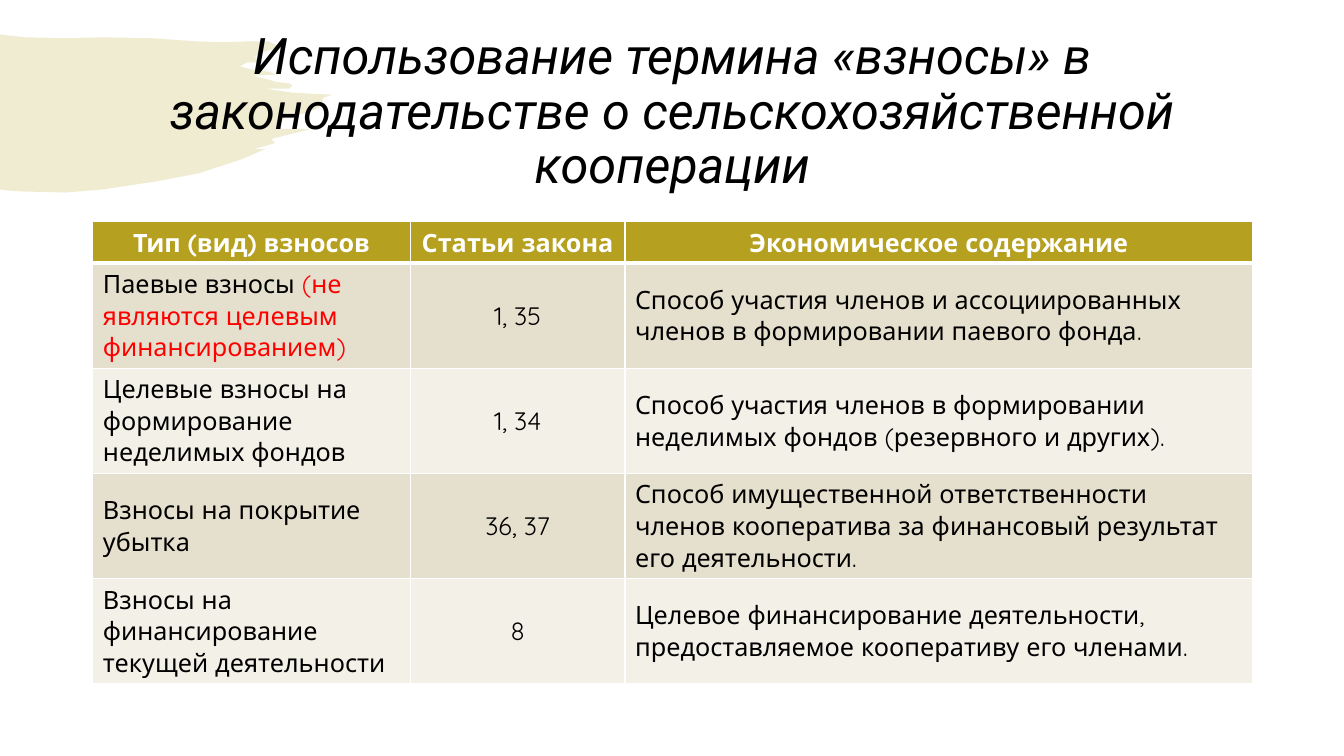
from lxml import etree
from pptx import Presentation
from pptx.dml.color import RGBColor
from pptx.enum.text import MSO_ANCHOR, PP_ALIGN
from pptx.oxml.ns import qn
from pptx.util import Cm, Pt

MIDDLE = MSO_ANCHOR.MIDDLE
LEFT, CENTER = PP_ALIGN.LEFT, PP_ALIGN.CENTER

TITLE = ("Использование термина «взносы» в законодательстве "
         "о сельскохозяйственной кооперации")
HEAD = ["Тип (вид) взносов", "Статьи закона", "Экономическое содержание"]
NOTE = "(не являются целевым финансированием)"
ROWS = [
    ["Паевые взносы ", "1, 35",
     "Способ участия членов и ассоциированных членов в формировании паевого фонда."],
    ["Целевые взносы на формирование неделимых фондов", "1, 34",
     "Способ участия членов в формировании неделимых фондов (резервного и других)."],
    ["Взносы на покрытие убытка", "36, 37",
     "Способ имущественной ответственности членов кооператива "
     "за финансовый результат его деятельности."],
    ["Взносы на финансирование текущей деятельности", "8",
     "Целевое финансирование деятельности, предоставляемое кооперативу его членами."],
]
COLORS = {"gold": "B5A020", "sand": "E5DFCD", "cream": "F3F0E8",
          "white": "FFFFFF", "black": "000000", "red": "FF0000"}
WIDTHS = [8, 5.41, 15.82]
ALIGNS = [LEFT, CENTER, LEFT]
HEAD_H, ROW_H = 1.04, 2.65
EDGE, TOP, WIDE = 2.34, 5.59, 29.21

# Brush outline, in steps of STEP
STEP = Cm(0.0254)
BRUSH = [
    (0, 34), (6, 35), (25, 37), (66, 38), (102, 37), (151, 38), (194, 41),
    (222, 42), (248, 41), (266, 41), (280, 47), (271, 49), (255, 54), (253, 57),
    (256, 59), (262, 62), (245, 62), (238, 66), (246, 68), (256, 70), (266, 71),
    (275, 74), (251, 75), (263, 78), (273, 81), (280, 82), (288, 83), (290, 85),
    (287, 88), (284, 88), (263, 88), (290, 92), (330, 94), (321, 97), (318, 106),
    (307, 111), (300, 113), (283, 116), (280, 120), (278, 125), (274, 128),
    (308, 128), (269, 138), (273, 142), (252, 148), (263, 148), (240, 158),
    (197, 172), (155, 180), (102, 188), (65, 191), (23, 190), (7, 189), (0, 188),
]


def color(name):
    return RGBColor.from_string(COLORS[name])


def style(run, size, font, tint, bold=False, italic=False):
    run.font.size, run.font.name = Pt(size), font
    run.font.bold, run.font.italic = bold, italic
    run.font.color.rgb = color(tint)


def add_brush(slide):
    pen = slide.shapes.build_freeform(*BRUSH[0], scale=STEP)
    pen.add_line_segments(BRUSH[1:], close=True)
    brush = pen.convert_to_shape()
    brush.shadow.inherit = False
    brush.line.fill.background()
    brush.fill.solid()
    brush.fill.fore_color.rgb = color("gold")
    tone = brush.fill._xPr.find(".//" + qn("a:srgbClr"))
    etree.SubElement(tone, qn("a:alpha"), val="20000")


def add_title(slide):
    frame = slide.shapes.add_textbox(Cm(EDGE), Cm(1.01), Cm(WIDE), Cm(3.68)).text_frame
    frame.word_wrap = True
    frame.vertical_anchor = MIDDLE
    frame.text = TITLE
    para = frame.paragraphs[0]
    para.alignment, para.line_spacing = CENTER, 0.9
    style(para.runs[0], 36, "Roboto", "black", italic=True)


def set_edges(cell, top, base):
    """Draw white cell borders; top and base are widths in points."""
    props = cell._tc.get_or_add_tcPr()
    sides = {"lnL": 1, "lnR": 1, "lnT": top, "lnB": base}
    for spot, (side, width) in enumerate(sides.items()):
        line = etree.Element(qn("a:" + side), w=str(Pt(width)))
        fill = etree.SubElement(line, qn("a:solidFill"))
        etree.SubElement(fill, qn("a:srgbClr"), val=COLORS["white"])
        props.insert(spot, line)


def add_grid(slide):
    high = HEAD_H + ROW_H * len(ROWS)
    grid = slide.shapes.add_table(len(ROWS) + 1, len(HEAD), Cm(EDGE), Cm(TOP),
                                  Cm(WIDE), Cm(high)).table
    for col, width in zip(grid.columns, WIDTHS):
        col.width = Cm(width)
    for r, texts in enumerate([HEAD] + ROWS):
        head = r == 0
        grid.rows[r].height = Cm(HEAD_H if head else ROW_H)
        shade = "gold" if head else "sand" if r % 2 else "cream"
        for c, text in enumerate(texts):
            cell = grid.cell(r, c)
            cell.vertical_anchor = MIDDLE
            cell.fill.solid()
            cell.fill.fore_color.rgb = color(shade)
            set_edges(cell, 3 if r == 1 else 1, 3 if head else 1)
            cell.text_frame.text = text
            para = cell.text_frame.paragraphs[0]
            para.alignment = CENTER if head else ALIGNS[c]
            style(para.runs[0], 18, "Quicksand", "white" if head else "black", bold=head)
    note = grid.cell(1, 0).text_frame.paragraphs[0].add_run()
    note.text = NOTE
    style(note, 18, "Quicksand", "red")


def main():
    deck = Presentation()
    deck.slide_width, deck.slide_height = Cm(33.87), Cm(19.05)
    slide = deck.slides.add_slide(deck.slide_layouts[6])
    add_brush(slide)
    add_title(slide)
    add_grid(slide)
    deck.save("out.pptx")


if __name__ == "__main__":
    main()
